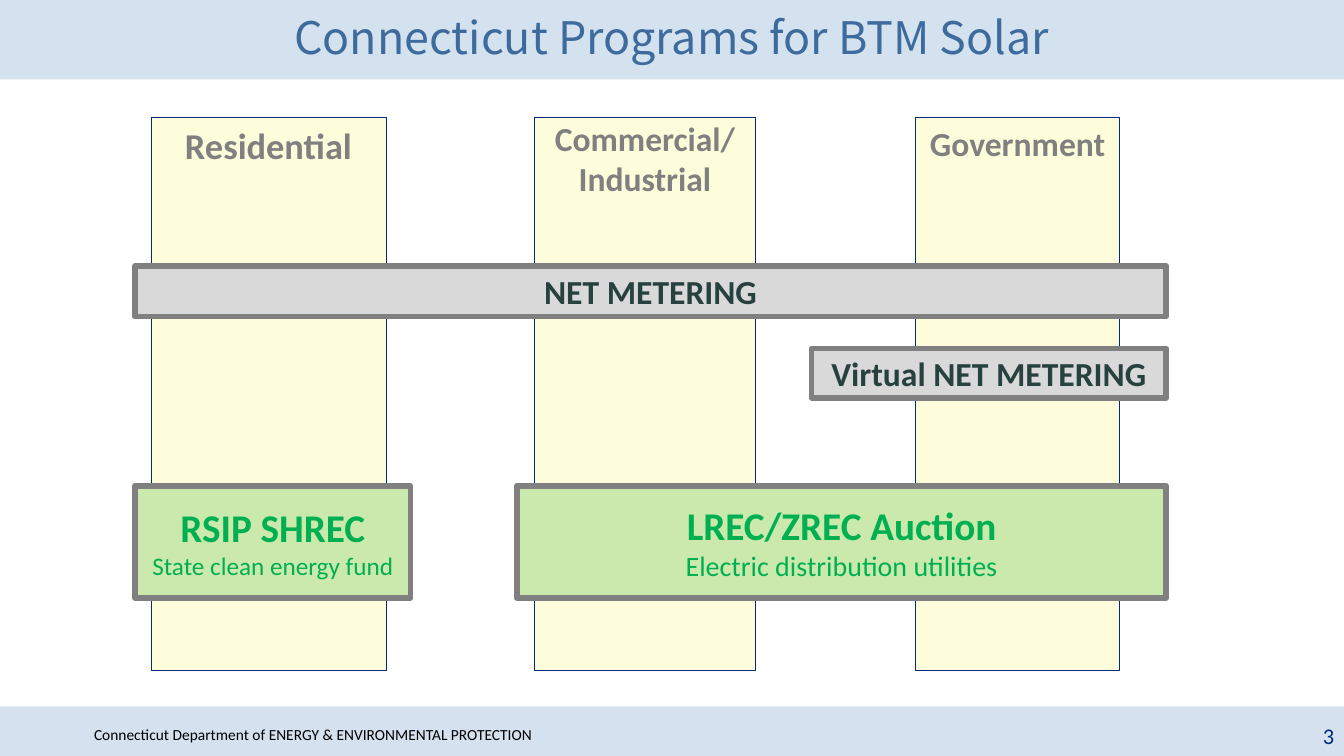
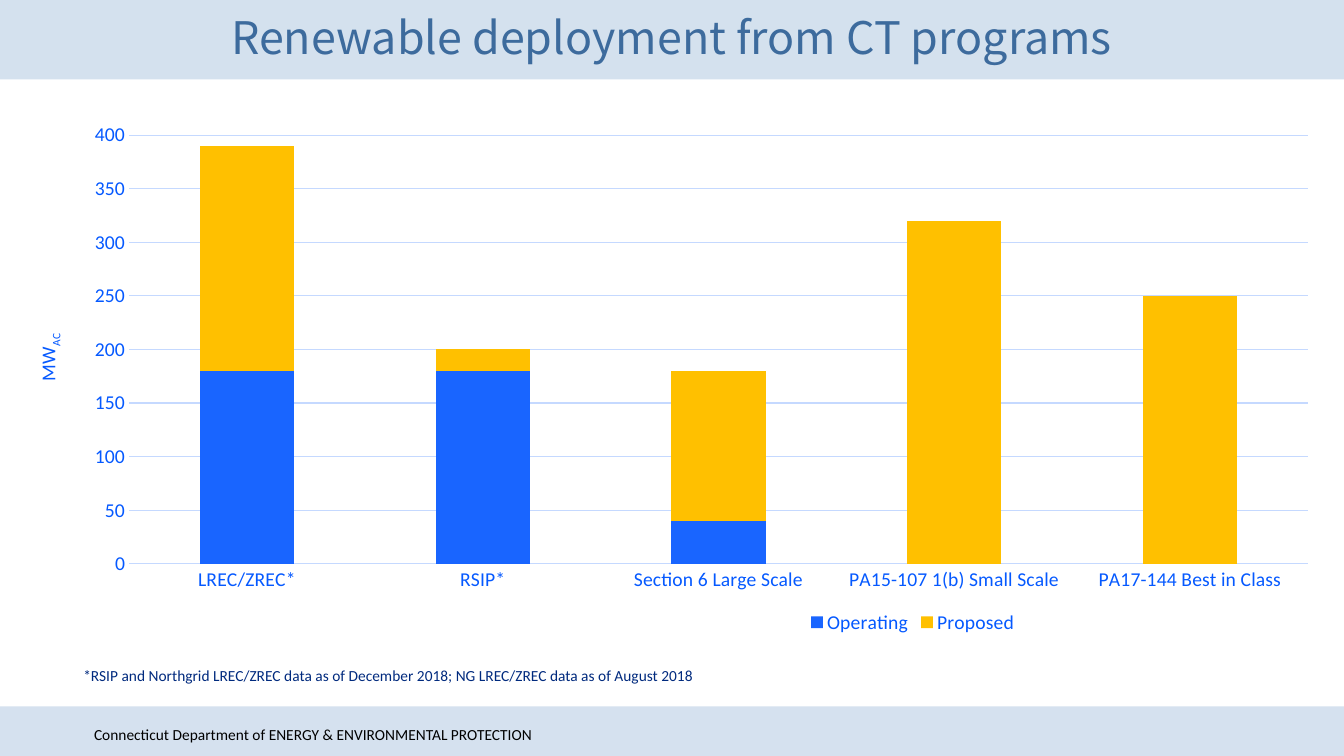
from pptx import Presentation
from pptx.chart.data import CategoryChartData
from pptx.dml.color import RGBColor
from pptx.enum.chart import XL_CHART_TYPE, XL_LEGEND_POSITION, XL_TICK_MARK
from pptx.enum.shapes import MSO_SHAPE
from pptx.enum.text import MSO_ANCHOR, PP_ALIGN
from pptx.oxml.ns import qn
from pptx.util import Cm, Pt
from lxml.etree import SubElement

WIDTH, HEIGHT = 33.87, 19.05
BAND_TOP = RGBColor(0xD4, 0xE1, 0xEE)
BAND_BOTTOM = RGBColor(0xD5, 0xE1, 0xEF)
TITLE_BLUE = RGBColor(0x3D, 0x6B, 0x9D)
NAVY = RGBColor(0x00, 0x2A, 0x7E)
BLACK = RGBColor(0x00, 0x00, 0x00)
CREAM = RGBColor(0xFE, 0xFD, 0xDB)
GRAY = RGBColor(0x80, 0x80, 0x80)
LIGHT_GRAY = RGBColor(0xD9, 0xD9, 0xD9)
DARK_GREEN = RGBColor(0x27, 0x42, 0x3E)
PALE_GREEN = RGBColor(0xCC, 0xE9, 0xAD)
GREEN = RGBColor(0x00, 0xB0, 0x50)
AXIS_BLUE = RGBColor(0x05, 0x59, 0xFF)
GRID_BLUE = RGBColor(0xC5, 0xD9, 0xFF)
BAR_BLUE = RGBColor(0x19, 0x65, 0xFF)
AMBER = RGBColor(0xFF, 0xC0, 0x00)
BODY_FONT, TITLE_FONT = "Calibri", "Noto Sans CJK JP"

COLUMN_TOP, COLUMN_HEIGHT = 2.97, 13.92
PROGRAM_LEFT, PROGRAM_RIGHT = 3.4, 29.39


def set_font(font, size, color, name=BODY_FONT, bold=False):
    font.size, font.name, font.bold = Pt(size), name, bold
    font.color.rgb = color


def write(tf, text, size=11, color=BLACK, name=BODY_FONT, bold=False,
          align=PP_ALIGN.LEFT, new=False):
    """Write text in the first paragraph of tf, or in a new one."""
    p = tf.add_paragraph() if new else tf.paragraphs[0]
    p.alignment = align
    r = p.add_run()
    r.text = text
    set_font(r.font, size, color, name, bold)


def add_text(s, text, left, top, width, height, anchor=MSO_ANCHOR.TOP,
             inset=0.13, **fmt):
    tf = s.shapes.add_textbox(Cm(left), Cm(top), Cm(width), Cm(height)).text_frame
    tf.word_wrap = True
    tf.vertical_anchor = anchor
    tf.margin_top = tf.margin_bottom = Cm(inset)
    write(tf, text, **fmt)


def add_box(s, left, top, width, height, fill, line=None, weight=0.75,
            anchor=MSO_ANCHOR.MIDDLE):
    sp = s.shapes.add_shape(MSO_SHAPE.RECTANGLE, Cm(left), Cm(top), Cm(width), Cm(height))
    sp.shadow.inherit = False
    sp.fill.solid()
    sp.fill.fore_color.rgb = fill
    if line is None:
        sp.line.fill.background()
    else:
        sp.line.color.rgb = line
        sp.line.width = Pt(weight)
    tf = sp.text_frame
    tf.word_wrap = True
    tf.vertical_anchor = anchor
    return tf


def add_column(s, left, width, heading, size=24, inset=0.13):
    tf = add_box(s, left, COLUMN_TOP, width, COLUMN_HEIGHT, CREAM, NAVY,
                 anchor=MSO_ANCHOR.TOP)
    tf.margin_top = Cm(inset)
    write(tf, heading, size, GRAY, bold=True, align=PP_ALIGN.CENTER)


def add_program(s, left, right, top, height, fill, color, name, size=24,
                provider=None, provider_size=18):
    """Add a framed bar across the customer columns it serves."""
    tf = add_box(s, left, top, right - left, height, fill, GRAY, 4)
    write(tf, name, size, color, bold=True, align=PP_ALIGN.CENTER)
    if provider:
        write(tf, provider, provider_size, color, align=PP_ALIGN.CENTER, new=True)


def add_slide(prs, title):
    s = prs.slides.add_slide(prs.slide_layouts[6])
    add_box(s, 0, 0, WIDTH, 2, BAND_TOP)
    add_box(s, 0, 17.8, WIDTH, 1.25, BAND_BOTTOM)
    add_text(s, "Connecticut Department of ENERGY & ENVIRONMENTAL PROTECTION",
             2.12, 18.15, 29.16, 0.75)
    add_text(s, title, 0, 0.25, WIDTH, 1.7, inset=0, size=32, color=TITLE_BLUE,
             name=TITLE_FONT, align=PP_ALIGN.CENTER)
    return s


def set_layout(element, index, **fractions):
    """Place a chart part by fractions of the chart area."""
    for old in element.findall(qn("c:layout")):
        element.remove(old)
    layout = SubElement(element, qn("c:layout"))
    element.insert(index, layout)
    manual = SubElement(layout, qn("c:manualLayout"))
    if "w" in fractions:
        SubElement(manual, qn("c:layoutTarget")).set("val", "inner")
    for axis in "xy":
        SubElement(manual, qn(f"c:{axis}Mode")).set("val", "edge")
    for key, value in fractions.items():
        SubElement(manual, qn(f"c:{key}")).set("val", str(value))


def style_axes(chart):
    for axis in (chart.category_axis, chart.value_axis):
        axis.major_tick_mark = axis.minor_tick_mark = XL_TICK_MARK.NONE
        set_font(axis.tick_labels.font, 14, AXIS_BLUE)
    chart.category_axis.format.line.color.rgb = GRID_BLUE
    chart.category_axis.format.line.width = Pt(0.75)

    axis = chart.value_axis
    axis.minimum_scale, axis.maximum_scale, axis.major_unit = 0, 400, 50
    axis.format.line.fill.background()
    grid = axis.major_gridlines.format.line
    grid.color.rgb = GRID_BLUE
    grid.width = Pt(0.75)
    tf = axis.axis_title.text_frame
    for text in ("MW", "AC"):
        write(tf, text, 14, AXIS_BLUE, align=PP_ALIGN.CENTER)
    subscript = tf.paragraphs[0].runs[1]
    subscript._r.get_or_add_rPr().set("baseline", "-25000")


def add_deployment_chart(s):
    data = CategoryChartData()
    data.categories = ["LREC/ZREC*", "RSIP*", "Section 6 Large Scale",
                       "PA15-107 1(b) Small Scale", "PA17-144 Best in Class"]
    data.add_series("Operating", (180, 180, 40, 0, 0))
    data.add_series("Proposed", (210, 20, 140, 320, 250))
    chart = s.shapes.add_chart(XL_CHART_TYPE.COLUMN_STACKED, Cm(0.25), Cm(2.87),
                               Cm(33.38), Cm(13.34), data).chart
    chart.has_title = False
    set_font(chart.font, 14, NAVY)
    plot = chart.plots[0]
    plot.gap_width, plot.overlap, plot.vary_by_categories = 150, 100, False
    for series, color in zip(plot.series, (BAR_BLUE, AMBER)):
        series.format.fill.solid()
        series.format.fill.fore_color.rgb = color
    style_axes(chart)

    chart.has_legend = True
    legend = chart.legend
    legend.position = XL_LEGEND_POSITION.BOTTOM
    legend.include_in_layout = False
    set_font(legend.font, 14, AXIS_BLUE)
    set_layout(legend._element, 1, x=0.6, y=0.93)
    plot_area = chart._chartSpace.chart.plotArea
    set_layout(plot_area, 0, x=0.09, y=0.04, w=0.89, h=0.81)


def build_programs_slide(prs):
    s = add_slide(prs, "Connecticut Programs for BTM Solar")
    add_text(s, "3", 26.25, 18.03, 7.62, 1.02, anchor=MSO_ANCHOR.MIDDLE, size=16,
             color=NAVY, align=PP_ALIGN.RIGHT)
    add_column(s, 3.81, 5.92, "Residential", size=26)
    add_column(s, 13.46, 5.59, "Commercial/ Industrial", inset=0)
    add_column(s, 23.07, 5.15, "Government")

    add_program(s, PROGRAM_LEFT, PROGRAM_RIGHT, 6.7, 1.28, LIGHT_GRAY, DARK_GREEN,
                "NET METERING")
    add_program(s, PROGRAM_LEFT, 10.35, 12.24, 2.83, PALE_GREEN, GREEN,
                "RSIP SHREC", 28, "State clean energy fund")
    add_program(s, 13.03, PROGRAM_RIGHT, 12.24, 2.83, PALE_GREEN, GREEN,
                "LREC/ZREC Auction", 28, "Electric distribution utilities", 20)
    add_program(s, 20.45, PROGRAM_RIGHT, 8.78, 1.25, LIGHT_GRAY, DARK_GREEN,
                "Virtual NET METERING")


def build_deployment_slide(prs):
    s = add_slide(prs, "Renewable deployment from CT programs")
    add_deployment_chart(s)
    add_text(s, "*RSIP and Northgrid LREC/ZREC data as of December 2018; "
             "NG LREC/ZREC data as of August 2018",
             1.85, 16.65, 18.88, 0.75, color=NAVY)


def main():
    prs = Presentation()
    prs.slide_width, prs.slide_height = Cm(WIDTH), Cm(HEIGHT)
    build_programs_slide(prs)
    build_deployment_slide(prs)
    prs.save("out.pptx")


if __name__ == "__main__":
    main()
